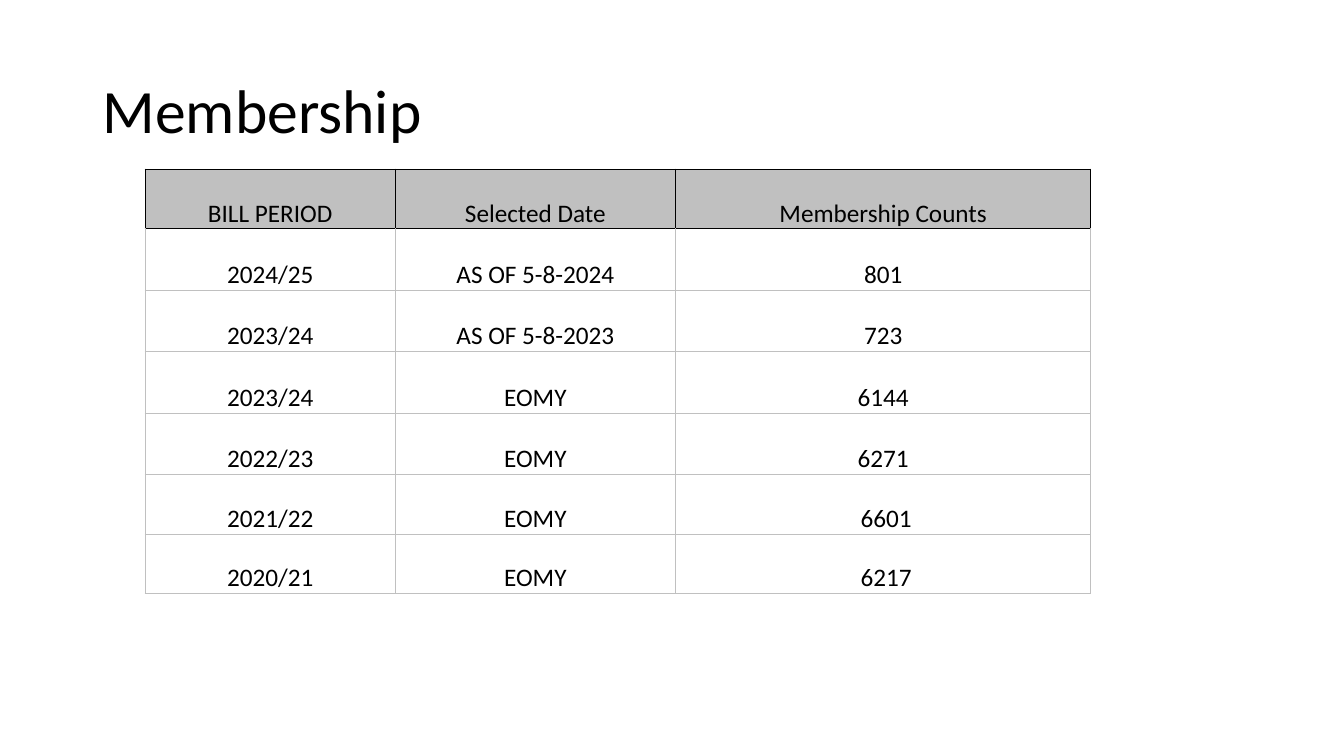
import pptx
import pptx.dml.color
import pptx.enum.text
import pptx.oxml.ns
import pptx.util
from lxml import etree

BLACK = pptx.dml.color.RGBColor(0x00, 0x00, 0x00)
SILVER = pptx.dml.color.RGBColor(0xC0, 0xC0, 0xC0)
FONT = "Calibri"
Inches = pptx.util.Inches
Pt = pptx.util.Pt

COLUMN_WIDTHS = [2.48, 2.78, 4.12]
ROW_HEIGHTS = [0.59] + [0.61] * 4 + [0.59] * 2
ROWS = [
    ["BILL PERIOD", "Selected Date", "Membership Counts"],
    ["2024/25", "AS OF 5-8-2024", "801"],
    ["2023/24", "AS OF 5-8-2023", "723"],
    ["2023/24", "EOMY", "6144"],
    ["2022/23", "EOMY", "6271"],
    ["2021/22", "EOMY", " 6601"],
    ["2020/21", "EOMY", " 6217"],
]


def add_run(paragraph, text, size):
    run = paragraph.add_run()
    run.text = text
    run.font.name = FONT
    run.font.size = Pt(size)
    run.font.color.rgb = BLACK


def add_border(cell, side, color):
    properties = cell._tc.get_or_add_tcPr()
    line = etree.SubElement(properties, pptx.oxml.ns.qn(f"a:ln{side}"), w=str(Pt(1)))
    fill = etree.SubElement(line, pptx.oxml.ns.qn("a:solidFill"))
    etree.SubElement(fill, pptx.oxml.ns.qn("a:srgbClr"), val=str(color))


presentation = pptx.Presentation()
presentation.slide_width = Inches(13.33)
presentation.slide_height = Inches(7.5)
slide = presentation.slides.add_slide(presentation.slide_layouts[6])

title = slide.shapes.add_textbox(Inches(0.92), Inches(0.4), Inches(11.5), Inches(1.45))
title.text_frame.word_wrap = True
title.text_frame.vertical_anchor = pptx.enum.text.MSO_ANCHOR.MIDDLE
title_paragraph = title.text_frame.paragraphs[0]
title_paragraph.line_spacing = 0.9
add_run(title_paragraph, "Membership", 44)

table = slide.shapes.add_table(
    len(ROWS), len(COLUMN_WIDTHS), Inches(1.44), Inches(1.68),
    Inches(sum(COLUMN_WIDTHS)), Inches(sum(ROW_HEIGHTS)),
).table
table.first_row = False
table.horz_banding = False
for column, width in zip(table.columns, COLUMN_WIDTHS):
    column.width = Inches(width)
for row, height in zip(table.rows, ROW_HEIGHTS):
    row.height = Inches(height)

for row_index, values in enumerate(ROWS):
    for column_index, value in enumerate(values):
        cell = table.cell(row_index, column_index)
        cell.margin_left = cell.margin_right = Inches(0.07)
        cell.margin_top = cell.margin_bottom = 0
        cell.vertical_anchor = pptx.enum.text.MSO_ANCHOR.BOTTOM
        for side in "LRTB":
            touches_header = row_index == 0 or (row_index == 1 and side == "T")
            add_border(cell, side, BLACK if touches_header else SILVER)
        if row_index == 0:
            cell.fill.solid()
            cell.fill.fore_color.rgb = SILVER
        else:
            cell.fill.background()
        paragraph = cell.text_frame.paragraphs[0]
        paragraph.alignment = pptx.enum.text.PP_ALIGN.CENTER
        add_run(paragraph, value, 18)

presentation.save("out.pptx")
